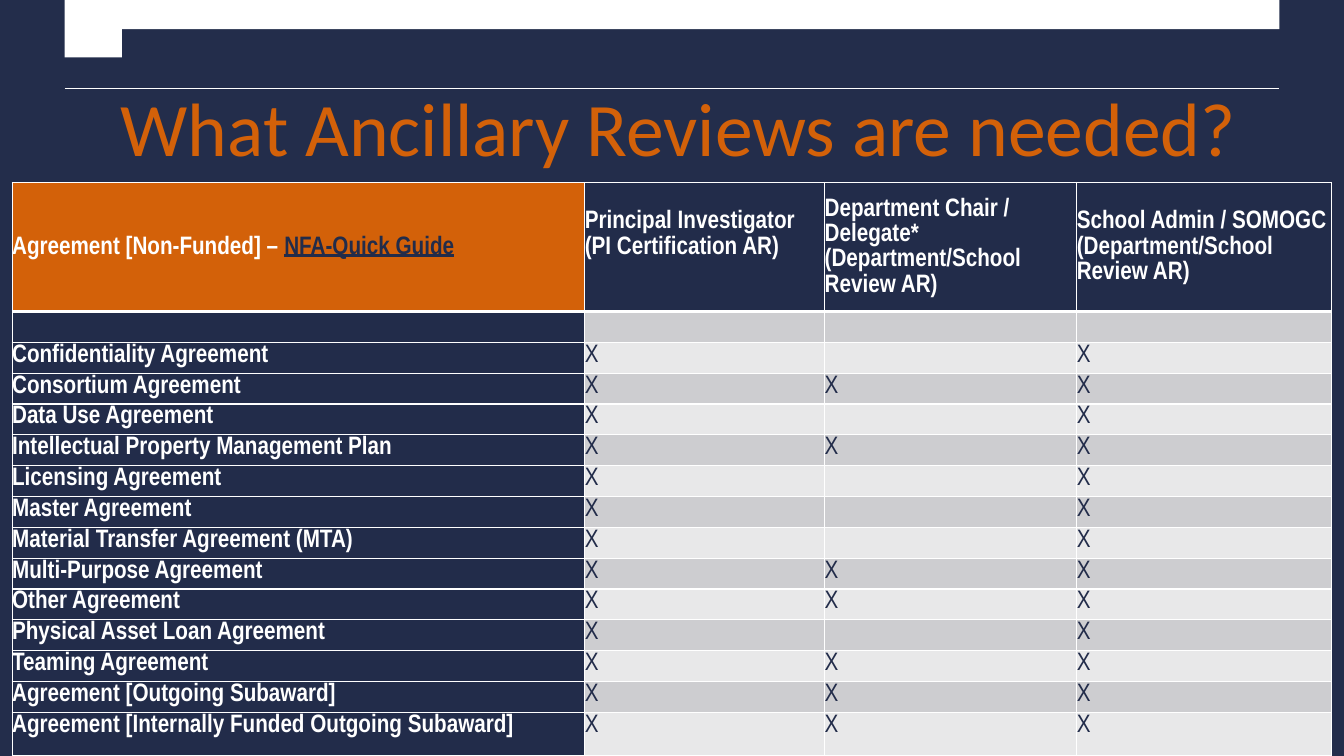
from dataclasses import dataclass

from lxml.etree import SubElement
from pptx import Presentation
from pptx.dml.color import RGBColor
from pptx.enum.shapes import MSO_CONNECTOR as Connector
from pptx.enum.text import MSO_ANCHOR as Anchor, MSO_AUTO_SIZE as AutoSize, PP_ALIGN as Align
from pptx.oxml.ns import qn
from pptx.util import Inches, Pt

# Content
TITLE = "What Ancillary Reviews are needed?"
HEADERS = [
    ("Agreement [Non-Funded] – ", "NFA-Quick Guide"),
    ("Principal Investigator (PI Certification AR)",),
    ("Department Chair / Delegate* (Department/School Review AR)",),
    ("School Admin / SOMOGC (Department/School Review AR)",),
]
# Agreement, then the reviews needed: investigator, chair, school
AGREEMENTS = [
    ("", "", "", ""),
    ("Confidentiality Agreement", "X", "", "X"),
    ("Consortium Agreement", "X", "X", "X"),
    ("Data Use Agreement", "X", "", "X"),
    ("Intellectual Property Management Plan", "X", "X", "X"),
    ("Licensing Agreement", "X", "", "X"),
    ("Master Agreement", "X", "", "X"),
    ("Material Transfer Agreement (MTA)", "X", "", "X"),
    ("Multi-Purpose Agreement", "X", "X", "X"),
    ("Other Agreement", "X", "X", "X"),
    ("Physical Asset Loan Agreement", "X", "", "X"),
    ("Teaming Agreement", "X", "X", "X"),
    ("Agreement [Outgoing Subaward]", "X", "X", "X"),
    ("Agreement [Internally Funded Outgoing Subaward]", "X", "X", "X"),
]


@dataclass(frozen=True)
class Theme:
    background: str = "232D4B"
    navy: str = "222C4A"
    orange: str = "D36109"
    white: str = "FFFFFF"
    bands: tuple = ("CDCDD0", "E8E8E9")
    title_font: str = "Calibri"
    table_font: str = "Arial Narrow"
    title_size: int = 54
    table_size: int = 18
    thin: int = 1
    thick: int = 3


THEME = Theme()
rgb = RGBColor.from_string

# Layout in inches
WIDTH, HEIGHT = 13.33, 7.5
LEFT, RIGHT = 0.64, 12.69
BAND_DEPTH, TAB_DEPTH, TAB_RIGHT = 0.29, 0.57, 1.21
FOOT_TOP, FOOT_TAB_TOP = 7.22, 7.21
RULE_Y = 0.88
TITLE_BOX = (0.48, 0.11, 12.5, 1.57)
TABLE_LEFT, TABLE_TOP = 0.12, 1.81
COLUMNS = (5.68, 2.38, 2.5, 2.53)
HEADER_ROW, LAST_ROW = 1.28, 0.43
HEADER_LIFT = 0.25
MIDDLE_ROWS = len(AGREEMENTS) - 1
middle_row = (HEIGHT - TABLE_TOP - HEADER_ROW - LAST_ROW) / MIDDLE_ROWS
ROWS = [HEADER_ROW] + [middle_row] * MIDDLE_ROWS + [LAST_ROW]


def set_font(font, name, size, color, bold=False):
    font.name, font.size, font.bold = name, Pt(size), bold
    font.color.rgb = rgb(color)


def set_borders(cell, top, bottom):
    sides = {"lnL": THEME.thin, "lnR": THEME.thin, "lnT": top, "lnB": bottom}
    properties = cell._tc.get_or_add_tcPr()
    for side, width in sides.items():
        line = SubElement(properties, qn(f"a:{side}"), w=str(Pt(width)))
        SubElement(SubElement(line, qn("a:solidFill")), qn("a:srgbClr"), val=THEME.white)


def write_cell(cell, texts, fill, color, bold, row):
    set_borders(cell, THEME.thick if row == 1 else THEME.thin,
                THEME.thick if row == 0 else THEME.thin)
    cell.fill.solid()
    cell.fill.fore_color.rgb = rgb(fill)
    cell.margin_left = cell.margin_right = cell.margin_top = cell.margin_bottom = 0
    cell.vertical_anchor = Anchor.MIDDLE if row == 0 else Anchor.TOP
    paragraph = cell.text_frame.paragraphs[0]
    paragraph.line_spacing = 1.07
    set_font(paragraph.font, THEME.table_font, THEME.table_size, color, bold)
    for text in filter(None, texts):
        paragraph.add_run().text = text


def add_frame(slide):
    # White bands along the top and bottom edges, each with a tab at the left
    top = [(LEFT, 0), (RIGHT, 0), (RIGHT, BAND_DEPTH), (TAB_RIGHT, BAND_DEPTH),
           (TAB_RIGHT, TAB_DEPTH), (LEFT, TAB_DEPTH)]
    foot = [(LEFT, FOOT_TAB_TOP), (TAB_RIGHT, FOOT_TAB_TOP), (TAB_RIGHT, FOOT_TOP),
            (RIGHT, FOOT_TOP), (RIGHT, HEIGHT), (LEFT, HEIGHT)]
    builder = slide.shapes.build_freeform()
    for outline in (top, foot):
        start, *others = [(Inches(x), Inches(y)) for x, y in outline]
        builder.move_to(*start)
        builder.add_line_segments(others, close=True)
    bands = builder.convert_to_shape()
    bands.shadow.inherit = False
    bands.fill.solid()
    bands.fill.fore_color.rgb = rgb(THEME.white)
    bands.line.fill.background()

    rule = slide.shapes.add_connector(
        Connector.STRAIGHT, Inches(LEFT), Inches(RULE_Y), Inches(RIGHT), Inches(RULE_Y))
    rule.line.color.rgb = rgb(THEME.white)
    rule.line.width = Pt(0.5)
    SubElement(rule._element.spPr, qn("a:effectLst"))


def format_title(title):
    title.left, title.top, title.width, title.height = map(Inches, TITLE_BOX)
    frame = title.text_frame
    frame.text = TITLE
    frame.word_wrap, frame.auto_size = True, AutoSize.NONE
    frame.vertical_anchor = Anchor.BOTTOM
    frame.margin_left = frame.margin_right = frame.margin_top = frame.margin_bottom = 0
    heading = frame.paragraphs[0]
    heading.alignment, heading.line_spacing = Align.CENTER, 0.7
    set_font(heading.font, THEME.title_font, THEME.title_size, THEME.orange)


def add_reviews(slide):
    reviews = slide.shapes.add_table(
        len(ROWS), len(COLUMNS), Inches(TABLE_LEFT), Inches(TABLE_TOP),
        Inches(sum(COLUMNS)), Inches(sum(ROWS))).table
    reviews.first_row = reviews.horz_banding = False
    for column, width in zip(reviews.columns, COLUMNS):
        column.width = Inches(width)
    for row, height in zip(reviews.rows, ROWS):
        row.height = Inches(height)

    # Header row; the investigator's heading sits half a line higher
    for c, texts in enumerate(HEADERS):
        fill = THEME.navy if c else THEME.orange
        write_cell(reviews.cell(0, c), texts, fill, THEME.white, True, 0)
    reviews.cell(0, 1).margin_bottom = Inches(HEADER_LIFT)
    guide = reviews.cell(0, 0).text_frame.paragraphs[0].runs[1]
    guide.font.underline = True
    guide.font.color.rgb = rgb(THEME.navy)

    # Agreement names on navy, marks on alternating bands
    for r, agreement in enumerate(AGREEMENTS, start=1):
        band = THEME.bands[(r - 1) % 2]
        for c, text in enumerate(agreement):
            fill, color = (band, THEME.navy) if c else (THEME.navy, THEME.white)
            write_cell(reviews.cell(r, c), (text,), fill, color, c == 0, r)


def main():
    deck = Presentation()
    deck.slide_width, deck.slide_height = Inches(WIDTH), Inches(HEIGHT)
    slide = deck.slides.add_slide(deck.slide_layouts[5])
    slide.background.fill.solid()
    slide.background.fill.fore_color.rgb = rgb(THEME.background)
    add_frame(slide)
    format_title(slide.shapes.title)
    add_reviews(slide)
    deck.save("out.pptx")


if __name__ == "__main__":
    main()
